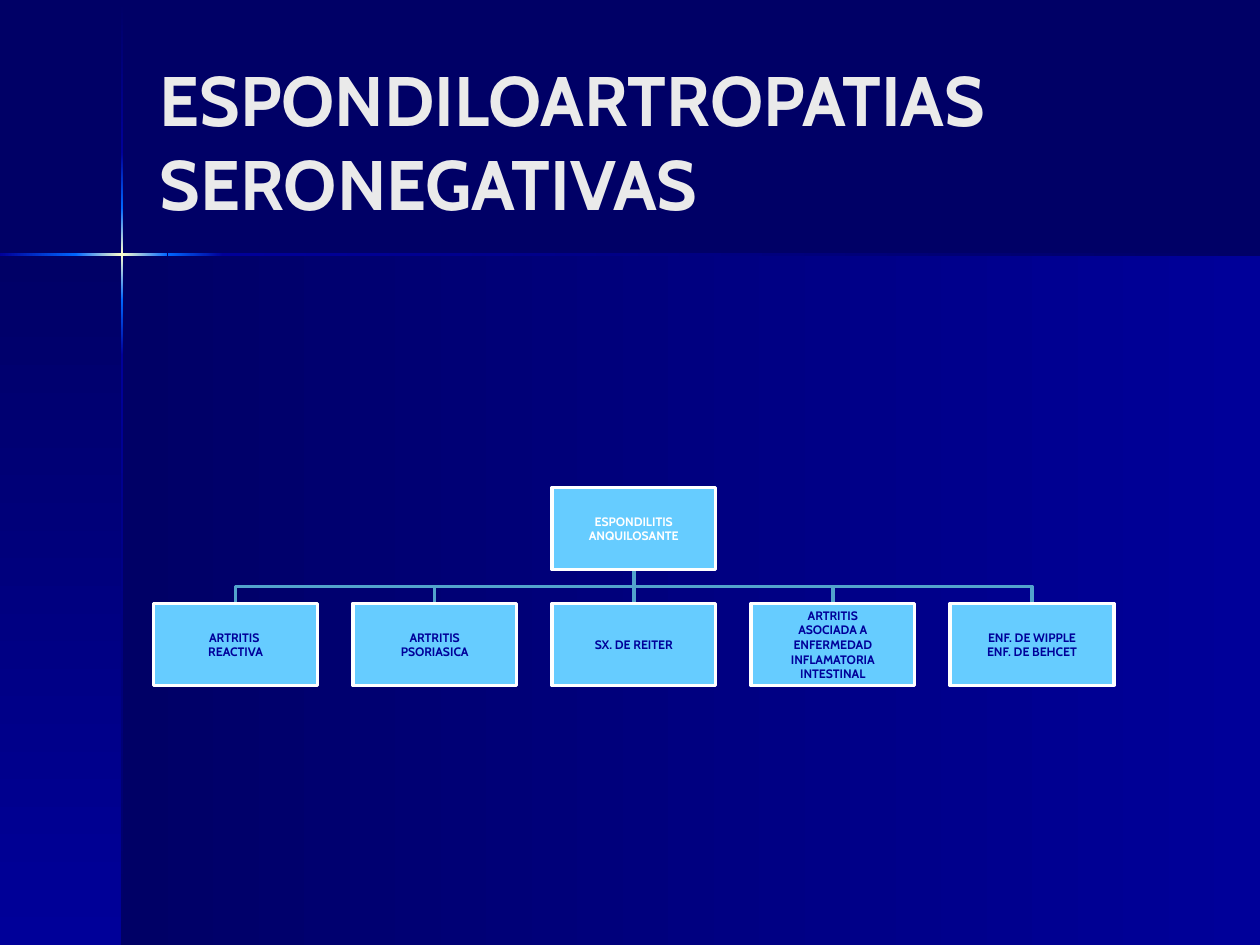
from lxml import etree
from pptx import Presentation
from pptx.dml.color import RGBColor
from pptx.enum import shapes, text
from pptx.oxml.ns import qn
from pptx.util import Inches, Pt

NAVY = RGBColor(0x00, 0x00, 0x66)
BLUE = RGBColor(0x00, 0x00, 0x99)
BRIGHT = RGBColor(0x00, 0x66, 0xFF)
CREAM = RGBColor(0xFF, 0xFF, 0xCC)
SKY = RGBColor(0x66, 0xCC, 0xFF)
TEAL = RGBColor(0x52, 0xA3, 0xCC)
WHITE = RGBColor(0xFF, 0xFF, 0xFF)
PALE = RGBColor(0xEA, 0xEA, 0xEA)
FONT = "Cabin"
GLOW = [BRIGHT, CREAM, BRIGHT]
BOX_W, BOX_H, STEP = 1.3, 0.65, 1.58
LEFT, ROOT_TOP, CHILD_TOP = 1.22, 3.87, 4.79
CHILDREN = [
    "ARTRITIS \nREACTIVA",
    "ARTRITIS\nPSORIASICA",
    "SX. DE REITER",
    "ARTRITIS\nASOCIADA A\nENFERMEDAD\nINFLAMATORIA\nINTESTINAL",
    "ENF. DE WIPPLE\nENF. DE BEHCET",
]


def add_rect(s, x, y, w, h):
    sp = s.shapes.add_shape(shapes.MSO_SHAPE.RECTANGLE,
                            Inches(x), Inches(y), Inches(w), Inches(h))
    sp.shadow.inherit = False
    return sp


def add_gradient(s, x, y, w, h, colors, down=False):
    sp = add_rect(s, x, y, w, h)
    sp.line.fill.background()
    sp.fill.gradient()
    sp.fill.gradient_angle = 270 if down else 0
    stops = sp._element.spPr.find(".//" + qn("a:gsLst"))
    for gs in list(stops):
        stops.remove(gs)
    for i, color in enumerate(colors):
        gs = etree.SubElement(stops, qn("a:gs"), pos=str(i * 100000 // (len(colors) - 1)))
        etree.SubElement(gs, qn("a:srgbClr"), val=str(color))


def add_background(s):
    s.background.fill.solid()
    s.background.fill.fore_color.rgb = NAVY
    add_gradient(s, 0.97, 2.02, 9.03, 5.48, [NAVY, BLUE])
    add_gradient(s, 0, 2.02, 0.97, 5.48, [NAVY, BLUE], down=True)
    for top, bottom, colors in [
        (0.01, 1.21, [NAVY, BLUE]), (2.82, 7.5, [BLUE, NAVY]),
        (2.38, 2.82, [BRIGHT, BLUE]), (1.21, 1.65, [BLUE, BRIGHT]),
        (1.65, 2.38, GLOW),
    ]:
        add_gradient(s, 0.96, top, 0.02, bottom - top, colors, down=True)
    for left, right, colors in [
        (1.77, 10, [BLUE, NAVY]), (0, 0.61, [BLUE, BRIGHT]),
        (1.33, 1.77, [BRIGHT, BLUE]), (0.6, 1.33, GLOW),
    ]:
        add_gradient(s, left, 2.01, right - left, 0.02, colors)


def format_text(tf, size, color, align):
    tf.word_wrap = True
    tf.vertical_anchor = text.MSO_ANCHOR.MIDDLE
    for p in tf.paragraphs:
        p.alignment = align
        for r in p.runs:
            r.font.name, r.font.size, r.font.bold = FONT, Pt(size), True
            r.font.color.rgb = color


def add_title(s, title):
    sp = s.shapes.add_textbox(Inches(1.17), Inches(0.33), Inches(8.25), Inches(1.57))
    sp.text_frame.text = title
    format_text(sp.text_frame, 40, PALE, text.PP_ALIGN.LEFT)


def add_box(s, x, y, label, color):
    sp = add_rect(s, x, y, BOX_W, BOX_H)
    sp.fill.solid()
    sp.fill.fore_color.rgb = SKY
    sp.line.color.rgb = WHITE
    sp.line.width = Pt(2)
    tf = sp.text_frame
    tf.margin_left = tf.margin_right = tf.margin_top = tf.margin_bottom = 0
    tf.text = label
    format_text(tf, 7, color, text.PP_ALIGN.CENTER)


def add_branch(s, x1, x2):
    y1, y2 = ROOT_TOP + BOX_H, CHILD_TOP
    if x1 == x2:
        sp = s.shapes.add_connector(shapes.MSO_CONNECTOR.STRAIGHT,
                                    Inches(x1), Inches(y1), Inches(x2), Inches(y2))
        etree.SubElement(sp._element.spPr, qn("a:effectLst"))
    else:
        mid = (y1 + y2) / 2
        fb = s.shapes.build_freeform(Inches(x1), Inches(y1))
        fb.add_line_segments([(Inches(x), Inches(y)) for x, y in
                              [(x1, mid), (x2, mid), (x2, y2)]], close=False)
        sp = fb.convert_to_shape()
        sp.shadow.inherit = False
        sp.fill.background()
    sp.line.color.rgb = TEAL
    sp.line.width = Pt(2)


def add_chart_tree(s):
    lefts = [LEFT + i * STEP for i in range(len(CHILDREN))]
    root = lefts[len(lefts) // 2]
    for x in reversed(lefts):
        add_branch(s, root + BOX_W / 2, x + BOX_W / 2)
    add_box(s, root, ROOT_TOP, "ESPONDILITIS\nANQUILOSANTE", WHITE)
    for x, label in zip(lefts, CHILDREN):
        add_box(s, x, CHILD_TOP, label, BLUE)


def main():
    """Build the slide on seronegative spondyloarthropathies."""
    prs = Presentation()
    prs.slide_width, prs.slide_height = Inches(10), Inches(7.5)
    s = prs.slides.add_slide(prs.slide_layouts[6])
    add_background(s)
    add_title(s, "ESPONDILOARTROPATIAS SERONEGATIVAS")
    add_chart_tree(s)
    prs.save("out.pptx")


if __name__ == "__main__":
    main()
